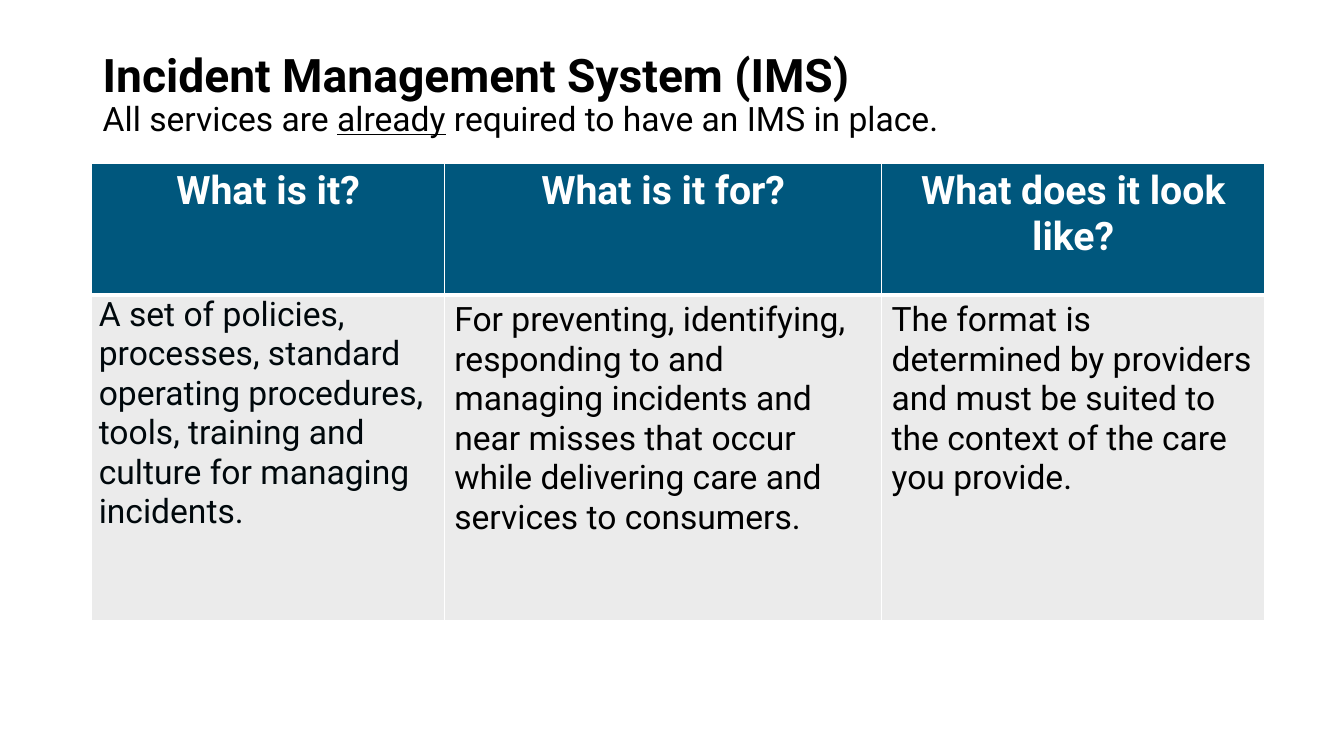
from dataclasses import dataclass

from lxml import etree
from pptx import Presentation
from pptx import util as u
from pptx.dml.color import RGBColor
from pptx.enum import text
from pptx.oxml import ns

FONT = "Roboto"
WHITE = "FFFFFF"
BLACK = "000000"
HEADER_FILL = "00577D"
BODY_FILL = "EBEBEB"
THIN, THICK = 1, 3


@dataclass(frozen=True)
class Span:
    words: str
    size: float
    color: str = BLACK
    bold: bool = False
    underline: bool = False


@dataclass(frozen=True)
class Column:
    width: float
    heading: str
    answer: str
    color: str = BLACK
    side_inset: float = 0.25
    top_inset: float = 0.13


TITLE = [
    [Span("Incident Management System (IMS)", 33, bold=True)],
    [
        Span("All services are ", 24),
        Span("already", 24, underline=True),
        Span(" required to have an IMS in place.", 24),
    ],
]

COLUMNS = [
    Column(
        8.89,
        "What is it?",
        "A set of policies, processes, standard operating procedures, tools, "
        "training and culture for managing incidents.",
        color="00080C",
        side_inset=0.18,
        top_inset=0,
    ),
    Column(
        11.02,
        "What is it for?",
        "For preventing, identifying, responding to and managing incidents and "
        "near misses that occur while delivering care and services to consumers.",
    ),
    Column(
        9.65,
        "What does it look like?",
        "The format is determined by providers and must be suited to the context "
        "of the care you provide.",
    ),
]
ROW_HEIGHTS = [3.33, 8.2]


def rgb(value: str) -> RGBColor:
    return RGBColor.from_string(value)


def add_span(para, item: Span) -> None:
    span = para.add_run()
    span.text = item.words
    font = span.font
    font.name = FONT
    font.size = u.Pt(item.size)
    font.bold = item.bold
    font.underline = item.underline
    font.color.rgb = rgb(item.color)


def add_title(page) -> None:
    box = page.shapes.add_textbox(u.Cm(2.34), u.Cm(0.56), u.Cm(29.21), u.Cm(3.68))
    frame = box.text_frame
    frame.word_wrap = True
    frame.vertical_anchor = text.MSO_ANCHOR.MIDDLE
    for index, spans in enumerate(TITLE):
        para = frame.add_paragraph() if index else frame.paragraphs[0]
        para.line_spacing = 0.9
        for item in spans:
            add_span(para, item)


def set_borders(cell, top: float, bottom: float) -> None:
    properties = cell._tc.get_or_add_tcPr()
    for side, points in (("L", THIN), ("R", THIN), ("T", top), ("B", bottom)):
        line = etree.SubElement(properties, ns.qn(f"a:ln{side}"), w=str(u.Pt(points)))
        fill = etree.SubElement(line, ns.qn("a:solidFill"))
        etree.SubElement(fill, ns.qn("a:srgbClr"), val=WHITE)


def fill_cell(cell, item: Span, fill: str, top: float, bottom: float) -> None:
    set_borders(cell, top, bottom)
    cell.fill.solid()
    cell.fill.fore_color.rgb = rgb(fill)
    add_span(cell.text_frame.paragraphs[0], item)


def add_table(page) -> None:
    width = sum(column.width for column in COLUMNS)
    table = page.shapes.add_table(
        len(ROW_HEIGHTS), len(COLUMNS),
        u.Cm(2.31), u.Cm(4.11), u.Cm(width), u.Cm(sum(ROW_HEIGHTS)),
    ).table
    table.horz_banding = False
    for row, height in zip(table.rows, ROW_HEIGHTS):
        row.height = u.Cm(height)
    for index, column in enumerate(COLUMNS):
        table.columns[index].width = u.Cm(column.width)
        header, body = table.cell(0, index), table.cell(1, index)
        heading = Span(column.heading, 28, WHITE, bold=True)
        fill_cell(header, heading, HEADER_FILL, THIN, THICK)
        header.text_frame.paragraphs[0].alignment = text.PP_ALIGN.CENTER
        fill_cell(body, Span(column.answer, 24, column.color), BODY_FILL, THICK, THIN)
        body.margin_left = body.margin_right = u.Cm(column.side_inset)
        body.margin_top = body.margin_bottom = u.Cm(column.top_inset)


def main() -> None:
    deck = Presentation()
    deck.slide_width, deck.slide_height = u.Cm(33.87), u.Cm(19.05)
    page = deck.slides.add_slide(deck.slide_layouts[6])
    add_table(page)
    add_title(page)
    deck.save("out.pptx")


if __name__ == "__main__":
    main()
